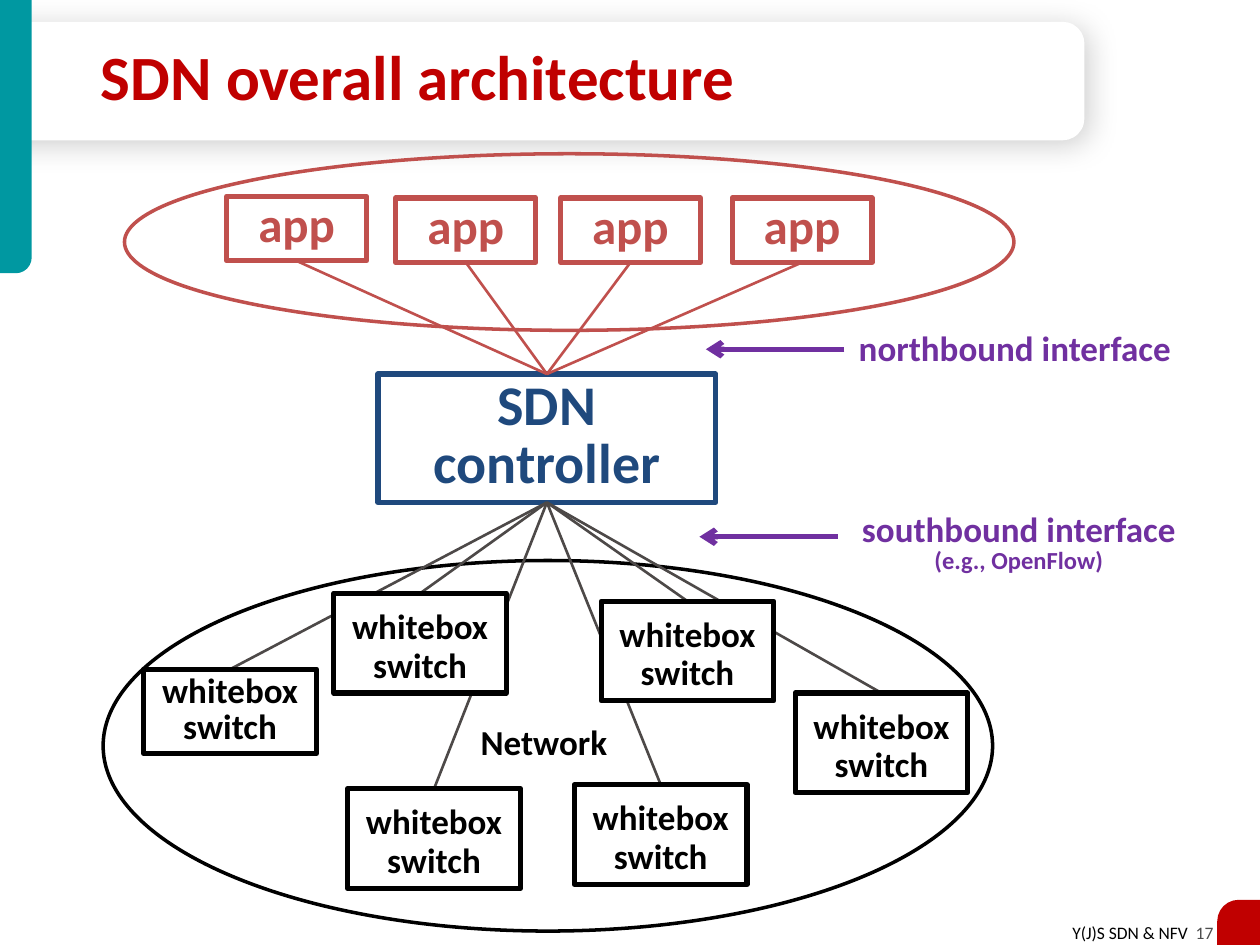
from dataclasses import dataclass

from lxml import etree
from pptx import Presentation
from pptx import util as u
from pptx.dml.color import RGBColor
from pptx.enum import shapes, text
from pptx.oxml import ns

Kind = shapes.MSO_SHAPE
Align = text.PP_ALIGN


@dataclass(frozen=True)
class Theme:
    font: str = "Calibri"
    white: str = "FFFFFF"
    black: str = "000000"
    red: str = "C00000"
    teal: str = "0098A1"
    brick: str = "C0504D"
    navy: str = "1F497D"
    purple: str = "7030A0"
    link: str = "4D4948"
    grey: str = "4D4D4D"
    title: int = 36
    controller: int = 32
    app: int = 28
    label: int = 20
    note: int = 14
    footer: int = 10


THEME = Theme()


def write(tf, *lines, size, color, bold=True, align=Align.CENTER, spacing=0.85):
    """Each line is a string or a list of (text, overrides) runs."""
    for i, line in enumerate(lines):
        p = tf.add_paragraph() if i else tf.paragraphs[0]
        p.alignment = align
        p.line_spacing = spacing
        for words, changes in [(line, {})] if isinstance(line, str) else line:
            r = p.add_run()
            r.text = words
            r.font.name = THEME.font
            r.font.bold = bold
            r.font.size = u.Pt(changes.get("size", size))
            r.font.color.rgb = RGBColor.from_string(changes.get("color", color))


class Canvas:
    def __init__(self, slide, theme):
        self.slide = slide
        self.theme = theme

    def title(self, words, *box):
        sp = self.slide.shapes.title
        sp.left, sp.top, sp.width, sp.height = map(u.Cm, box)
        tf = sp.text_frame
        tf.vertical_anchor = text.MSO_ANCHOR.MIDDLE
        tf.auto_size = text.MSO_AUTO_SIZE.NONE
        write(tf, words, size=self.theme.title, color=self.theme.red, align=Align.LEFT)
        self.slide.shapes._spTree.append(sp._element)

    def shape(self, kind, *box, fill=None, line=None, weight=3, adjust=(), flip=None):
        sp = self.slide.shapes.add_shape(kind, *map(u.Cm, box))
        sp.shadow.inherit = False
        for i, value in enumerate(adjust):
            sp.adjustments[i] = value
        if flip:
            sp._element.spPr.xfrm.set(flip, "1")
        if fill:
            sp.fill.solid()
            sp.fill.fore_color.rgb = RGBColor.from_string(fill)
        else:
            sp.fill.background()
        if line:
            sp.line.color.rgb = RGBColor.from_string(line)
            sp.line.width = u.Pt(weight)
        else:
            sp.line.fill.background()
        return sp

    def soft_shadow(self, sp):
        effects = sp._element.spPr.find(ns.qn("a:effectLst"))
        shadow = etree.SubElement(
            effects, ns.qn("a:outerShdw"), blurRad=str(u.Pt(17)), dist=str(u.Pt(3)),
            dir=str(45 * 60000), algn="tl", rotWithShape="0")
        color = etree.SubElement(shadow, ns.qn("a:srgbClr"), val=self.theme.black)
        etree.SubElement(color, ns.qn("a:alpha"), val="19000")

    def box(self, line_text, *box, size, color, **style):
        sp = self.shape(Kind.RECTANGLE, *box, **style)
        tf = sp.text_frame
        tf.word_wrap = True
        tf.auto_size = text.MSO_AUTO_SIZE.SHAPE_TO_FIT_TEXT
        tf.vertical_anchor = text.MSO_ANCHOR.TOP
        write(tf, line_text, size=size, color=color)

    def label(self, *lines, box, wrap=True, **style):
        tf = self.slide.shapes.add_textbox(*map(u.Cm, box)).text_frame
        tf.word_wrap = wrap
        tf.auto_size = text.MSO_AUTO_SIZE.SHAPE_TO_FIT_TEXT
        write(tf, *lines, **style)

    def connector(self, start, end, color, weight=1.5, arrow=False):
        cx = self.slide.shapes.add_connector(
            shapes.MSO_CONNECTOR.STRAIGHT, *map(u.Cm, (*start, *end)))
        cx.line.color.rgb = RGBColor.from_string(color)
        cx.line.width = u.Pt(weight)
        spPr = cx._element.spPr
        if arrow:
            etree.SubElement(spPr.find(ns.qn("a:ln")), ns.qn("a:tailEnd"), type="arrow")
        etree.SubElement(spPr, ns.qn("a:effectLst"))


def draw_frame(c):
    t = c.theme
    c.label([("Y(J)S SDN & NFV  ", {}), ("17", {"color": t.grey})],
            box=(21.26, 18.47, 3.45, 0.69), wrap=False, size=t.footer, color=t.black,
            bold=False, align=Align.RIGHT, spacing=1.0)
    panel = c.shape(Kind.ROUND_2_SAME_RECTANGLE, 9.73, -9.3, 2.39, 21.87,
                    fill=t.white, adjust=(0.184, 0))
    panel.rotation = 90
    c.soft_shadow(panel)
    c.shape(Kind.ROUND_1_RECTANGLE, 0, 0, 0.64, 5.51,
            fill=t.teal, adjust=(0.5,), flip="flipV")
    c.shape(Kind.ROUND_1_RECTANGLE, 24.54, 18.14, 0.86, 0.91,
            fill=t.red, adjust=(0.5,), flip="flipH")
    c.title("SDN overall architecture", 1.78, 0.74, 18.8, 1.8)


def draw_architecture(c):
    t = c.theme
    left, top, width, height = controller = (7.62, 7.54, 6.81, 2.59)
    north = (left + width / 2, top)
    south = (left + width / 2, top + height)
    app_w, app_h = 2.82, 1.3
    apps = [(4.57, 3.96), (7.98, 3.99), (11.3, 3.99), (14.76, 3.99)]
    switch_w = 3.48
    low, tall = 1.7, 2.01
    switches = [(2.9, 13.49, low), (7.01, 15.9, tall), (6.73, 11.96, tall),
                (11.58, 15.82, tall), (16.03, 13.97, tall), (12.12, 12.12, tall)]

    c.box("Network", 8.64, 14.53, 4.65, 0.99, size=t.label, color=t.black, fill=t.white)
    c.box("SDN controller", *controller, size=t.controller, color=t.navy, line=t.navy)
    for x, y in apps:
        c.box("app", x, y, app_w, app_h, size=t.app, color=t.brick, line=t.brick)
    c.shape(Kind.OVAL, 2.51, 3.1, 17.93, 3.56, line=t.brick, weight=2)
    c.shape(Kind.OVAL, 2.08, 11.3, 17.93, 7.47, line=t.black, weight=2)

    for x, y, _ in switches:
        c.connector(south, (x + switch_w / 2, y), t.link)
    for x, y, h in switches:
        gap = t.label if h == low else t.app
        c.box([("whitebox", {}), (" ", {"size": gap}), ("switch", {})],
              x, y, switch_w, h, size=t.label, color=t.black, fill=t.white, line=t.black)
    for x, y in apps:
        c.connector((x + app_w / 2, y + app_h), north, t.brick)


def draw_interfaces(c):
    t = c.theme
    style = dict(size=t.label, color=t.purple)
    c.label("southbound interface", [("(e.g., OpenFlow)", {"size": t.note})],
            box=(16.59, 10.24, 7.9, 1.5), **style)
    c.label("northbound interface", box=(16.69, 6.58, 7.54, 0.99), **style)
    for x, y in [(16.89, 10.82), (17.02, 7.04)]:
        c.connector((x, y), (x - 2.79, y), t.purple, weight=3, arrow=True)


def main():
    prs = Presentation()
    prs.slide_width, prs.slide_height = u.Cm(25.4), u.Cm(19.05)
    c = Canvas(prs.slides.add_slide(prs.slide_layouts[5]), THEME)
    draw_frame(c)
    draw_architecture(c)
    draw_interfaces(c)
    prs.save("out.pptx")


if __name__ == "__main__":
    main()
